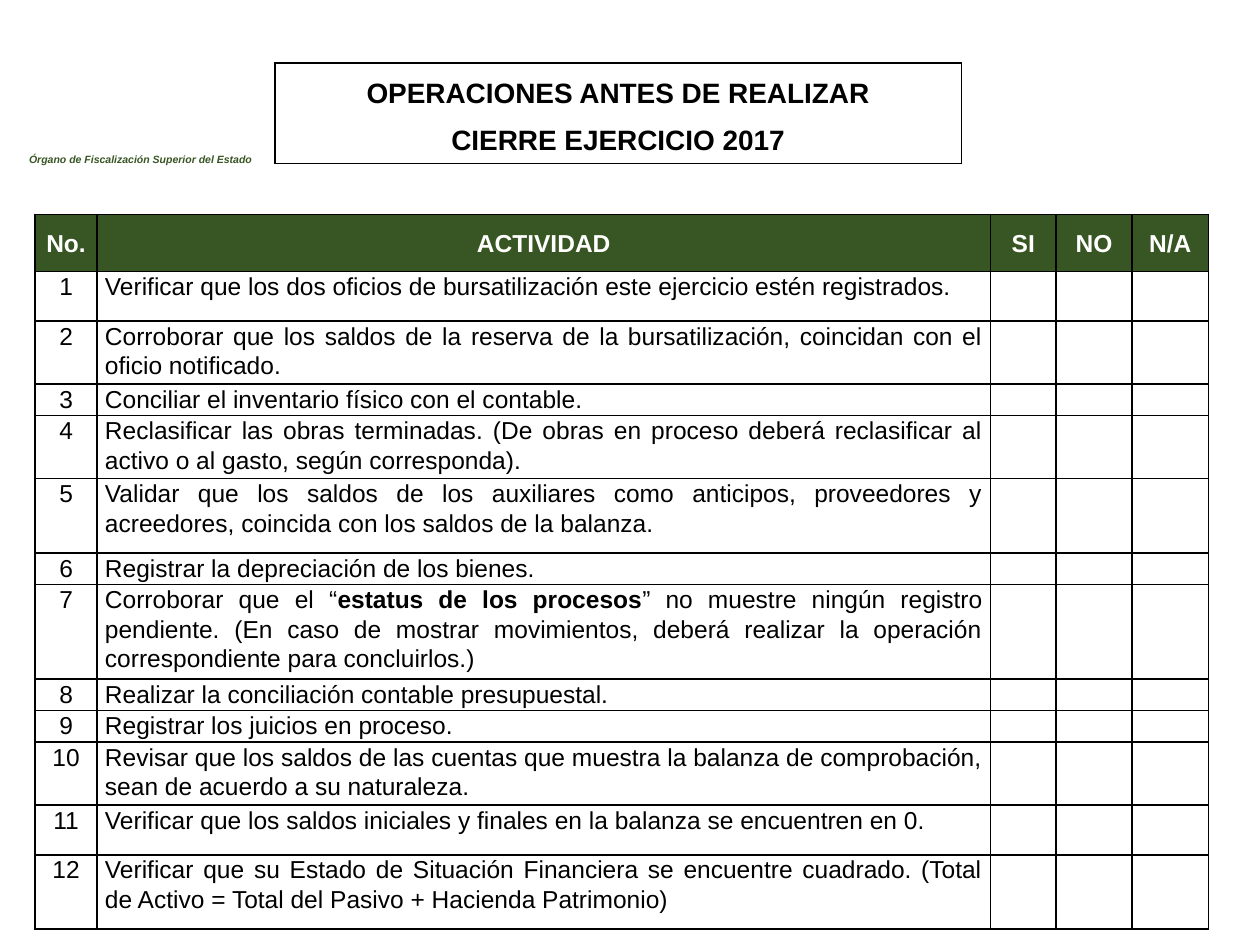
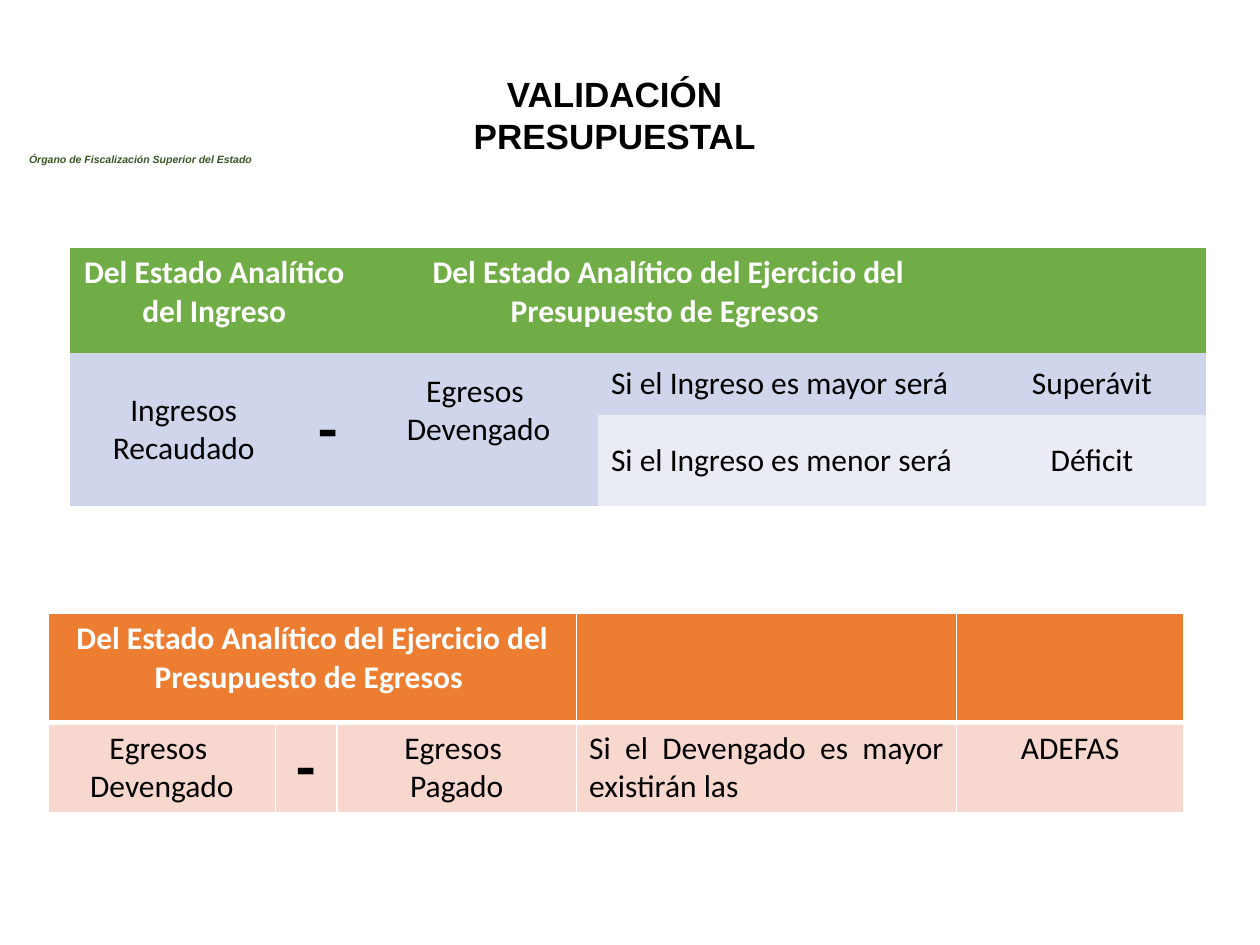
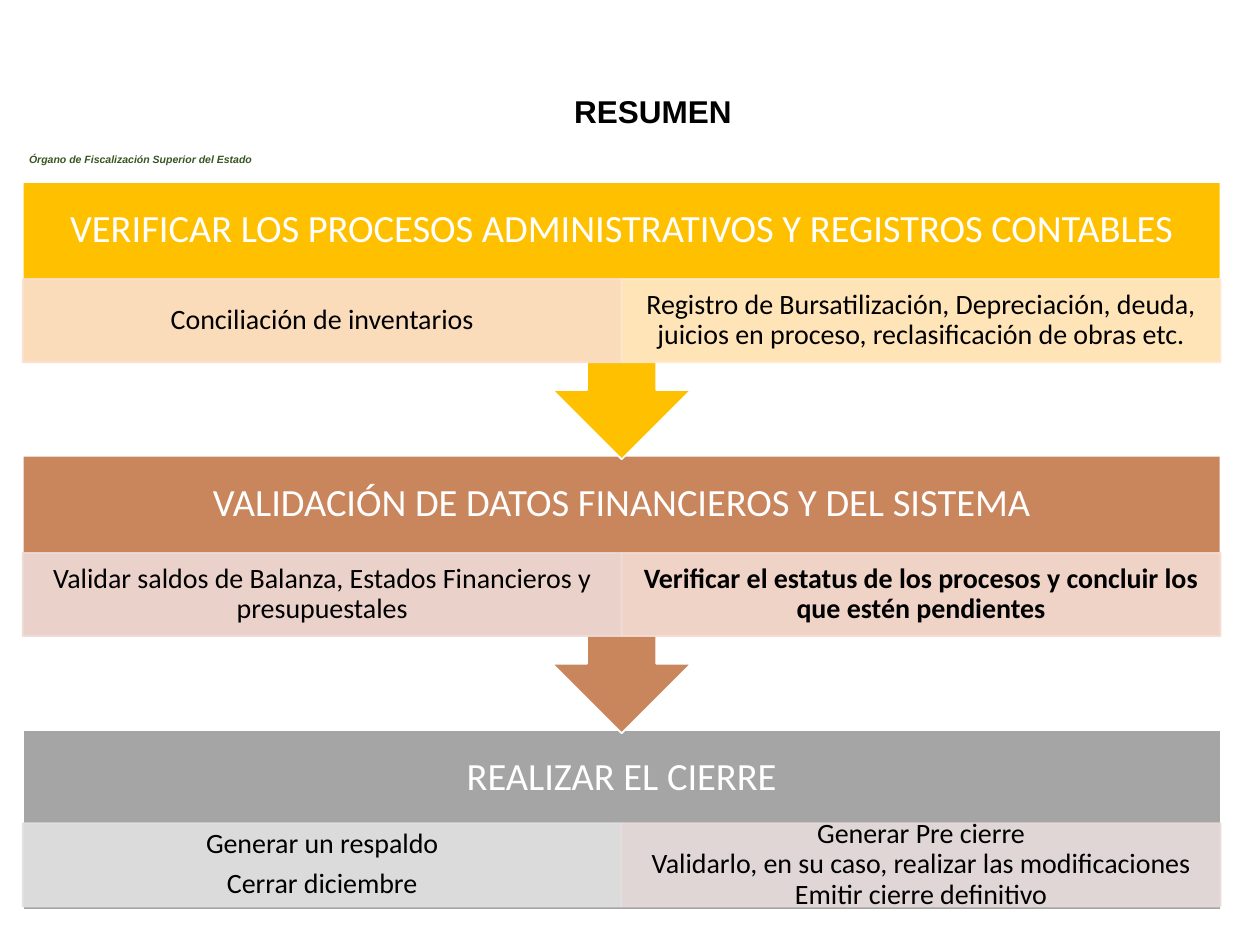
from pptx import Presentation
from pptx.dml.color import RGBColor
from pptx.enum.shapes import MSO_SHAPE
from pptx.enum.text import MSO_ANCHOR, MSO_AUTO_SIZE, PP_ALIGN
from pptx.oxml import parse_xml
from pptx.oxml.ns import nsdecls, qn
from pptx.util import Pt

RECTANGLE = MSO_SHAPE.RECTANGLE
CALLOUT = MSO_SHAPE.DOWN_ARROW_CALLOUT
TOP, MIDDLE = MSO_ANCHOR.TOP, MSO_ANCHOR.MIDDLE
LEFT, CENTER, JUSTIFY = PP_ALIGN.LEFT, PP_ALIGN.CENTER, PP_ALIGN.JUSTIFY
NO_AUTOFIT = MSO_AUTO_SIZE.NONE
PLAIN_STYLE = "{2D5ABB26-0587-4C30-8999-92F81FD0307C}"
TITLE_ONLY, BLANK = 5, 6

COLORS = {
    "black": "000000",
    "white": "FFFFFF",
    "dark_green": "385623",
    "green": "70AD47",
    "blue_band": "CFD5EA",
    "light_blue_band": "E9EBF5",
    "orange": "ED7D31",
    "peach": "F8D7CE",
    "gold": "FFC000",
    "gold_left": "FAE0CF",
    "gold_right": "FFE8CB",
    "copper": "C9855C",
    "copper_left": "EEDAD7",
    "copper_right": "F4DCD3",
    "gray": "A5A5A5",
    "gray_left": "E1E1E1",
    "gray_right": "E7DCDC",
}

ACTIVITIES = [
    ("Verificar que los dos oficios de bursatilización este ejercicio estén registrados.", 28.5),
    ("Corroborar que los saldos de la reserva de la bursatilización, coincidan con el "
     "oficio notificado.", 36),
    ("Conciliar el inventario físico con el contable.", 18),
    ("Reclasificar las obras terminadas. (De obras en proceso deberá reclasificar al "
     "activo o al gasto, según corresponda).", 36),
    ("Validar que los saldos de los auxiliares como anticipos, proveedores y "
     "acreedores, coincida con los saldos de la balanza.", 42.5),
    ("Registrar la depreciación de los bienes.", 18),
    ("Corroborar que el “**estatus de los procesos**” no muestre ningún registro "
     "pendiente. (En caso de mostrar movimientos, deberá realizar la operación "
     "correspondiente para concluirlos.)", 54),
    ("Realizar la conciliación contable presupuestal.", 18),
    ("Registrar los juicios en proceso.", 18),
    ("Revisar que los saldos de las cuentas que muestra la balanza de comprobación, "
     "sean de acuerdo a su naturaleza.", 36),
    ("Verificar que los saldos iniciales y finales en la balanza se encuentren en 0.", 28.5),
    ("Verificar que su Estado de Situación Financiera se encuentre cuadrado. (Total "
     "de Activo = Total del Pasivo + Hacienda Patrimonio)", 42.5),
]

STAGES = [
    ("gold", "VERIFICAR LOS PROCESOS ADMINISTRATIVOS Y REGISTROS CONTABLES",
     ["Conciliación de inventarios"],
     ["Registro de Bursatilización, Depreciación, deuda, juicios en proceso, "
      "reclasificación de obras etc."]),
    ("copper", "VALIDACIÓN DE DATOS FINANCIEROS Y DEL SISTEMA",
     ["Validar saldos de Balanza, Estados Financieros y presupuestales"],
     ["Verificar el estatus de los procesos y concluir los que estén pendientes"]),
    ("gray", "REALIZAR EL CIERRE",
     ["Generar un respaldo", "Cerrar diciembre"],
     ["Generar Pre cierre", "Validarlo, en su caso, realizar las modificaciones",
      "Emitir cierre definitivo"]),
]


def rgb(name):
    return RGBColor.from_string(COLORS[name])


def write(frame, lines, size, face="Arial", color="black", bold=False, italic=False,
          align=CENTER, spacing=None, after=None):
    frame.word_wrap = True
    for index, line in enumerate(lines):
        paragraph = frame.paragraphs[0] if index == 0 else frame.add_paragraph()
        for part, text in enumerate(line.split("**")):
            if text:
                run = paragraph.add_run()
                run.text = text
                if part % 2:
                    run.font.bold = True
        paragraph.alignment = align
        paragraph.line_spacing = spacing
        paragraph.space_after = after
        font = paragraph.font
        font.name, font.size, font.bold, font.italic = face, Pt(size), bold, italic
        font.color.rgb = rgb(color)


def set_insets(target, left, top, right, bottom):
    target.margin_left, target.margin_top = Pt(left), Pt(top)
    target.margin_right, target.margin_bottom = Pt(right), Pt(bottom)


def add_block(slide, preset, box, fill, line=None, alpha=None):
    block = slide.shapes.add_shape(preset, *(Pt(length) for length in box))
    block.shadow.inherit = False
    block.fill.solid()
    block.fill.fore_color.rgb = rgb(fill)
    if line:
        block.line.color.rgb = rgb(line)
        block.line.width = Pt(1)
    else:
        block.line.fill.background()
    if alpha:
        for color in block._element.spPr.iter(qn("a:srgbClr")):
            color.append(parse_xml(f'<a:alpha {nsdecls("a")} val="{alpha * 1000}"/>'))
    return block


def add_grid(slide, left, top, widths, heights):
    frame = slide.shapes.add_table(len(heights), len(widths), Pt(left), Pt(top),
                                   Pt(sum(widths)), Pt(sum(heights)))
    frame._element.find(".//" + qn("a:tableStyleId")).text = PLAIN_STYLE
    grid = frame.table
    for column, width in zip(grid.columns, widths):
        column.width = Pt(width)
    for row, height in zip(grid.rows, heights):
        row.height = Pt(height)
    return grid


def paint(cell, fill):
    cell.fill.solid()
    cell.fill.fore_color.rgb = rgb(fill)


def set_borders(cell, color, bottom=1, top=1):
    properties = cell._tc.get_or_add_tcPr()
    widths = {"lnL": 1, "lnR": 1, "lnT": top, "lnB": bottom}
    for index, (side, width) in enumerate(widths.items()):
        properties.insert(index, parse_xml(
            f'<a:{side} {nsdecls("a")} w="{Pt(width)}"><a:solidFill>'
            f'<a:srgbClr val="{COLORS[color]}"/></a:solidFill></a:{side}>'))


def add_agency(slide):
    band = add_block(slide, RECTANGLE, (9.5, 83.5, 146, 14.5), "white")
    band.text_frame.vertical_anchor = MIDDLE
    write(band.text_frame, ["Órgano de Fiscalización Superior del Estado"], 6,
          color="dark_green", bold=True, italic=True, align=LEFT)


def new_slide(deck, layout):
    slide = deck.slides.add_slide(deck.slide_layouts[layout])
    add_agency(slide)
    return slide


def set_title(slide, text, size, box, left_inset=7.2):
    title = slide.shapes.title
    title.left, title.top, title.width, title.height = (Pt(length) for length in box)
    frame = title.text_frame
    frame.auto_size = NO_AUTOFIT
    frame.vertical_anchor = TOP
    set_insets(frame, left_inset, 3.6, 7.2, 3.6)
    write(frame, [text], size, bold=True)


def add_boxed_heading(slide, left, top, width, height):
    cell = add_grid(slide, left, top, [width], [height]).cell(0, 0)
    set_insets(cell, 3.6, 0, 3.6, 0)
    set_borders(cell, "black")
    write(cell.text_frame, ["OPERACIONES ANTES DE REALIZAR", "CIERRE EJERCICIO 2017"],
          16, bold=True, spacing=1.5)


def add_checklist(slide, left, top):
    heights = [32.5] + [height for _, height in ACTIVITIES]
    grid = add_grid(slide, left, top, [35.5, 510.5, 37.5, 43.5, 43.5], heights)
    rows = [["No.", "ACTIVIDAD", "SI", "NO", "N/A"]]
    rows += [[str(number), activity, "", "", ""]
             for number, (activity, _) in enumerate(ACTIVITIES, 1)]
    for row, texts in enumerate(rows):
        header = row == 0
        for column, text in enumerate(texts):
            cell = grid.cell(row, column)
            set_insets(cell, 4.5, 0, 4.5, 0)
            set_borders(cell, "black")
            if header:
                paint(cell, "dark_green")
                cell.vertical_anchor = MIDDLE
            write(cell.text_frame, [text], 14 if text else 12,
                  color="white" if header else "black", bold=header, spacing=1.07,
                  align=JUSTIFY if column == 1 and not header else CENTER)


BALANCE_WIDTHS = [130, 35, 137, 217, 130]


def write_balance_cell(cell, lines, header=False, align=CENTER):
    minus = lines == ["-"]
    write(cell.text_frame, lines, 36 if minus else 18, "Calibri",
          "white" if header else "black", bold=header or minus, align=align)


def add_result_balance(slide, left, top):
    grid = add_grid(slide, left, top, BALANCE_WIDTHS, [60.5, 35, 52])
    for row, fill in enumerate(["green", "blue_band", "light_blue_band"]):
        for column in range(len(BALANCE_WIDTHS)):
            paint(grid.cell(row, column), fill)
            if row:
                grid.cell(row, column).vertical_anchor = MIDDLE
    for column in (0, 2):
        grid.cell(0, column).merge(grid.cell(0, column + 1))
    for column in range(3):
        grid.cell(1, column).merge(grid.cell(2, column))

    write_balance_cell(grid.cell(0, 0), ["Del Estado Analítico del Ingreso"], header=True)
    write_balance_cell(grid.cell(0, 2), [
        "Del Estado Analítico del Ejercicio del Presupuesto de Egresos "], header=True)
    operands = [["Ingresos Recaudado"], ["-"], ["Egresos ", "Devengado"]]
    for column, lines in enumerate(operands):
        write_balance_cell(grid.cell(1, column), lines)
    grid.cell(1, 2).margin_bottom = Pt(25)
    outcomes = [("Si el Ingreso es mayor será", "Superávit"),
                ("Si el Ingreso es menor será", "Déficit")]
    for row, (condition, result) in enumerate(outcomes, 1):
        write_balance_cell(grid.cell(row, 3), [condition], align=LEFT)
        write_balance_cell(grid.cell(row, 4), [result])


def add_debt_balance(slide, left, top):
    grid = add_grid(slide, left, top, BALANCE_WIDTHS, [62.5, 50])
    for column in range(len(BALANCE_WIDTHS)):
        header, detail = grid.cell(0, column), grid.cell(1, column)
        paint(header, "orange")
        set_borders(header, "white", bottom=3)
        paint(detail, "peach")
        set_borders(detail, "white", top=3)
    grid.cell(0, 0).merge(grid.cell(0, 2))
    write_balance_cell(grid.cell(0, 0), [
        "Del Estado Analítico del Ejercicio del Presupuesto de Egresos "], header=True)
    details = [["Egresos ", "Devengado"], ["-"], ["Egresos ", "Pagado"],
               ["Si el Devengado es mayor existirán las "], ["ADEFAS"]]
    for column, lines in enumerate(details):
        write_balance_cell(grid.cell(1, column), lines,
                           align=JUSTIFY if column == 3 else CENTER)


def add_stage(slide, left, top, width, stage, last):
    color, heading, left_lines, right_lines = stage
    body, panel_height = 103, 47.5
    panel_top = 53.5 if last else 55.5
    block = add_block(slide, RECTANGLE if last else CALLOUT,
                      (left, top, width, body if last else 158.5), color, "white")
    block.text_frame.vertical_anchor = MIDDLE
    set_insets(block.text_frame, 12, 0, 12, body - 55.5)
    write(block.text_frame, [heading], 22, "Calibri", "white", spacing=0.9)

    panel_width = width / 2
    for index, (side, lines) in enumerate([("left", left_lines), ("right", right_lines)]):
        tint = f"{color}_{side}"
        panel = add_block(slide, RECTANGLE,
                          (left + index * panel_width, top + panel_top,
                           panel_width, panel_height), tint, tint, alpha=90)
        panel.text_frame.vertical_anchor = MIDDLE
        set_insets(panel.text_frame, 8.5, 1.5, 8.5, 1.5)
        write(panel.text_frame, lines, 16, "Calibri", spacing=0.9,
              bold=color == "copper" and side == "right",
              after=Pt(5.6) if len(lines) == 2 else None)


def build_checklist(deck):
    slide = new_slide(deck, BLANK)
    add_boxed_heading(slide, 157, 36, 392.5, 57.5)
    add_checklist(slide, 20, 122.5)


def build_validation(deck):
    slide = new_slide(deck, TITLE_ONLY)
    set_title(slide, "VALIDACIÓN PRESUPUESTAL", 20, (203, 38, 296.5, 55.5))
    add_result_balance(slide, 40, 141.5)
    add_debt_balance(slide, 27.5, 350.5)


def build_summary(deck):
    slide = new_slide(deck, TITLE_ONLY)
    set_title(slide, "RESUMEN", 18, (147, 49, 361.5, 29), left_inset=98)
    for index in reversed(range(len(STAGES))):
        add_stage(slide, 13, 104 + 156.5 * index, 684.5, STAGES[index],
                  index == len(STAGES) - 1)


def main():
    deck = Presentation()
    deck.slide_width, deck.slide_height = Pt(720), Pt(540)
    build_checklist(deck)
    build_validation(deck)
    build_summary(deck)
    deck.save("out.pptx")


if __name__ == "__main__":
    main()
